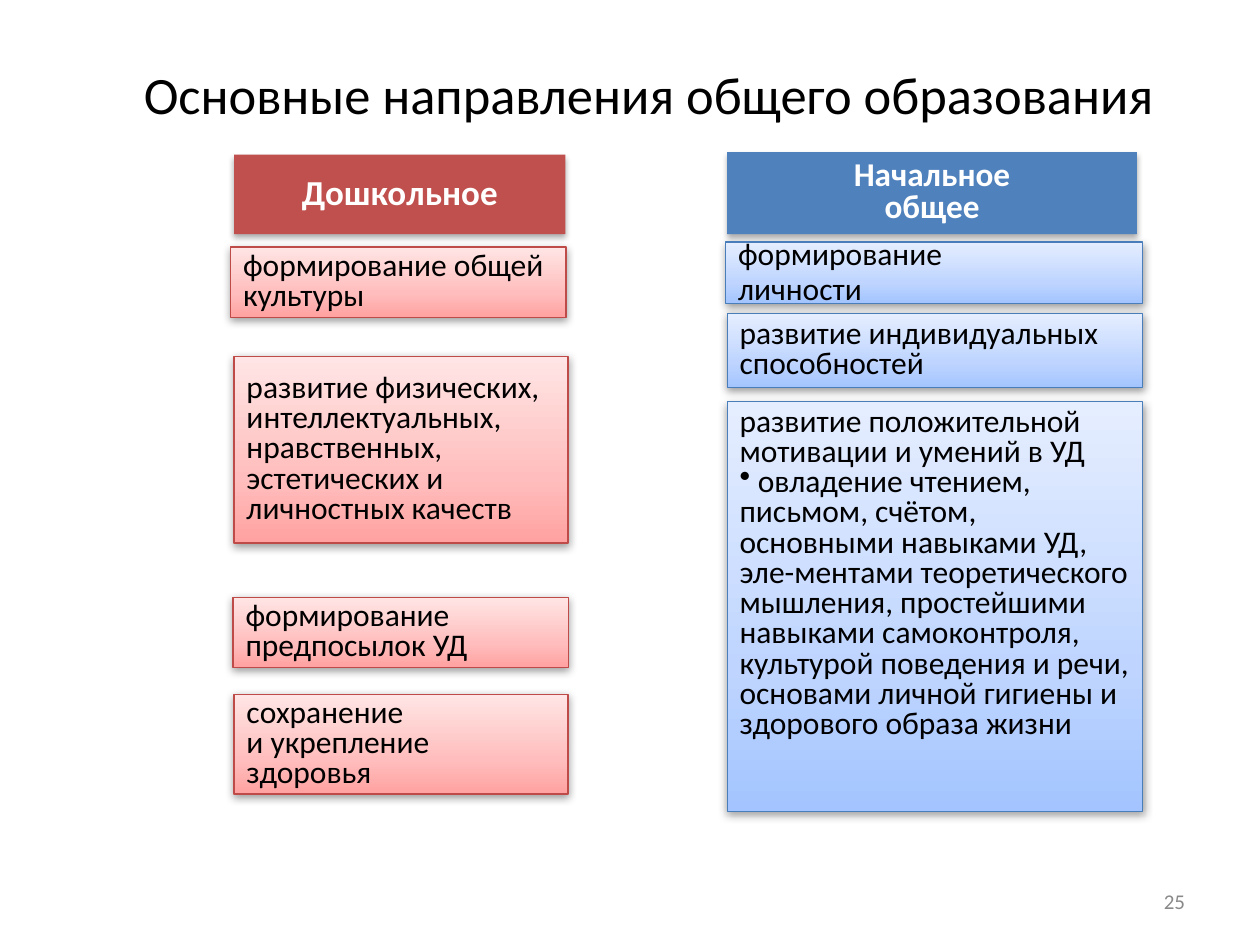
from dataclasses import dataclass

from lxml import etree
from pptx import Presentation
from pptx.dml.color import RGBColor
from pptx.enum.shapes import MSO_SHAPE
from pptx.enum.text import MSO_ANCHOR, PP_ALIGN
from pptx.oxml.ns import qn
from pptx.shapes.autoshape import Shape
from pptx.util import Cm, Pt

RECTANGLE = MSO_SHAPE.RECTANGLE
TOP, MIDDLE = MSO_ANCHOR.TOP, MSO_ANCHOR.MIDDLE
LEFT, CENTER, RIGHT = PP_ALIGN.LEFT, PP_ALIGN.CENTER, PP_ALIGN.RIGHT

BLACK = RGBColor(0x00, 0x00, 0x00)
WHITE = RGBColor(0xFF, 0xFF, 0xFF)
GRAY = RGBColor(0x89, 0x89, 0x89)
RED = RGBColor(0xC0, 0x50, 0x4D)
RED_EDGE = RGBColor(0xBE, 0x4B, 0x48)
RED_TINTS = (RGBColor(0xFF, 0xA2, 0xA1), RGBColor(0xFF, 0xBE, 0xBD), RGBColor(0xFF, 0xE5, 0xE5))
BLUE = RGBColor(0x4F, 0x81, 0xBD)
BLUE_EDGE = RGBColor(0x4A, 0x7E, 0xBB)
BLUE_TINTS = (RGBColor(0xA3, 0xC4, 0xFF), RGBColor(0xBF, 0xD5, 0xFF), RGBColor(0xE5, 0xEE, 0xFF))
TINT_POSITIONS = (0, 35, 100)
FONT = "Calibri"
BULLET = "•"


@dataclass(frozen=True)
class Box:
    left: float
    top: float
    width: float
    height: float
    paragraphs: tuple[str, ...]
    size: float = 18
    spacing: float = 0.8
    anchor: MSO_ANCHOR = MIDDLE

    def frame(self) -> tuple[Cm, ...]:
        return tuple(Cm(n) for n in (self.left, self.top, self.width, self.height))


@dataclass(frozen=True)
class Level:
    color: RGBColor
    edge: RGBColor
    tints: tuple[RGBColor, ...]
    heading: Box
    goals: tuple[Box, ...]


TITLE = Box(2.29, 0.71, 21.59, 2.36, ("Основные направления общего образования",), 30, 1)
PAGE_NUMBER = Box(18.21, 17.65, 5.93, 1.02, ("25",), 12, 1)

PRESCHOOL = Level(
    RED, RED_EDGE, RED_TINTS,
    Box(4.72, 3.12, 6.68, 1.6, ("Дошкольное",), 20, 0.9),
    (
        Box(4.65, 4.98, 6.76, 1.42, ("формирование общей культуры",)),
        Box(4.72, 7.19, 6.73, 3.76, (
            "развитие физических, интеллектуальных, нравственных, "
            "эстетических и личностных качеств",
        )),
        Box(4.7, 12.04, 6.76, 1.42, ("формирование предпосылок УД",)),
        Box(4.72, 14, 6.73, 2.01, ("сохранение\nи укрепление здоровья",)),
    ),
)
PRIMARY = Level(
    BLUE, BLUE_EDGE, BLUE_TINTS,
    Box(14.66, 3.07, 8.26, 1.65, ("Начальное", "общее"), 19),
    (
        Box(14.63, 4.88, 8.41, 1.24, ("формирование", "личности"), spacing=0.9),
        Box(14.66, 6.32, 8.38, 1.5, ("развитие индивидуальных способностей",)),
        Box(14.66, 8.1, 8.38, 8.26, (
            "развитие положительной мотивации и умений в УД",
            "• овладение чтением, письмом, счётом, основными навыками УД, "
            "эле-ментами теоретического мышления, простейшими навыками "
            "самоконтроля, культурой поведения и речи, основами личной "
            "гигиены и здорового образа жизни",
        ), anchor=TOP),
    ),
)


def write(shape: Shape, box: Box, *, color: RGBColor = BLACK,
          align: PP_ALIGN = LEFT, bold: bool = False) -> None:
    frame = shape.text_frame
    frame.word_wrap = True
    frame.vertical_anchor = box.anchor
    for index, text in enumerate(box.paragraphs):
        paragraph = frame.add_paragraph() if index else frame.paragraphs[0]
        paragraph.alignment = align
        paragraph.line_spacing = box.spacing
        if text.startswith(BULLET):
            properties = paragraph._p.get_or_add_pPr()
            etree.SubElement(properties, qn("a:buChar")).set("char", BULLET)
        for number, line in enumerate(text.removeprefix(BULLET).split("\n")):
            if number:
                paragraph.add_line_break()
            run = paragraph.add_run()
            run.text = line
            run.font.name = FONT
            run.font.size = Pt(box.size)
            run.font.bold = bold
            run.font.color.rgb = color


def add_color(parent: etree._Element, color: RGBColor) -> etree._Element:
    element = etree.SubElement(parent, qn("a:srgbClr"))
    element.set("val", str(color))
    return element


def add_shadow(shape: Shape, blur: float, distance: float, opacity: int) -> None:
    shape.shadow.inherit = False
    effects = shape._element.spPr.find(qn("a:effectLst"))
    shadow = etree.SubElement(effects, qn("a:outerShdw"))
    shadow.set("blurRad", str(Pt(blur)))
    shadow.set("dist", str(Pt(distance)))
    shadow.set("dir", "5400000")
    shadow.set("rotWithShape", "0")
    alpha = etree.SubElement(add_color(shadow, BLACK), qn("a:alpha"))
    alpha.set("val", str(opacity * 1000))


def fill_gradient(shape: Shape, tints: tuple[RGBColor, ...]) -> None:
    shape.fill.gradient()
    shape.fill.gradient_angle = 90
    stops = shape._element.spPr.find(qn("a:gradFill")).find(qn("a:gsLst"))
    for old_stop in list(stops):
        stops.remove(old_stop)
    for position, tint in zip(TINT_POSITIONS, tints):
        stop = etree.SubElement(stops, qn("a:gs"))
        stop.set("pos", str(position * 1000))
        add_color(stop, tint)


def draw_level(slide, level: Level) -> None:
    heading = slide.shapes.add_shape(RECTANGLE, *level.heading.frame())
    heading.fill.solid()
    heading.fill.fore_color.rgb = level.color
    heading.line.fill.background()
    add_shadow(heading, 3.5, 2.2, 32)
    write(heading, level.heading, color=WHITE, align=CENTER, bold=True)

    goals = slide.shapes.add_group_shape()
    for box in level.goals:
        goal = goals.shapes.add_shape(RECTANGLE, *box.frame())
        fill_gradient(goal, level.tints)
        goal.line.color.rgb = level.edge
        goal.line.width = Pt(0.75)
        add_shadow(goal, 5, 1.6, 38)
        write(goal, box)


def main() -> None:
    presentation = Presentation()
    presentation.slide_width = Cm(25.4)
    presentation.slide_height = Cm(19.05)
    slide = presentation.slides.add_slide(presentation.slide_layouts[6])
    write(slide.shapes.add_textbox(*TITLE.frame()), TITLE, align=CENTER)
    write(slide.shapes.add_textbox(*PAGE_NUMBER.frame()), PAGE_NUMBER, color=GRAY, align=RIGHT)
    for level in (PRESCHOOL, PRIMARY):
        draw_level(slide, level)
    presentation.save("out.pptx")


if __name__ == "__main__":
    main()
